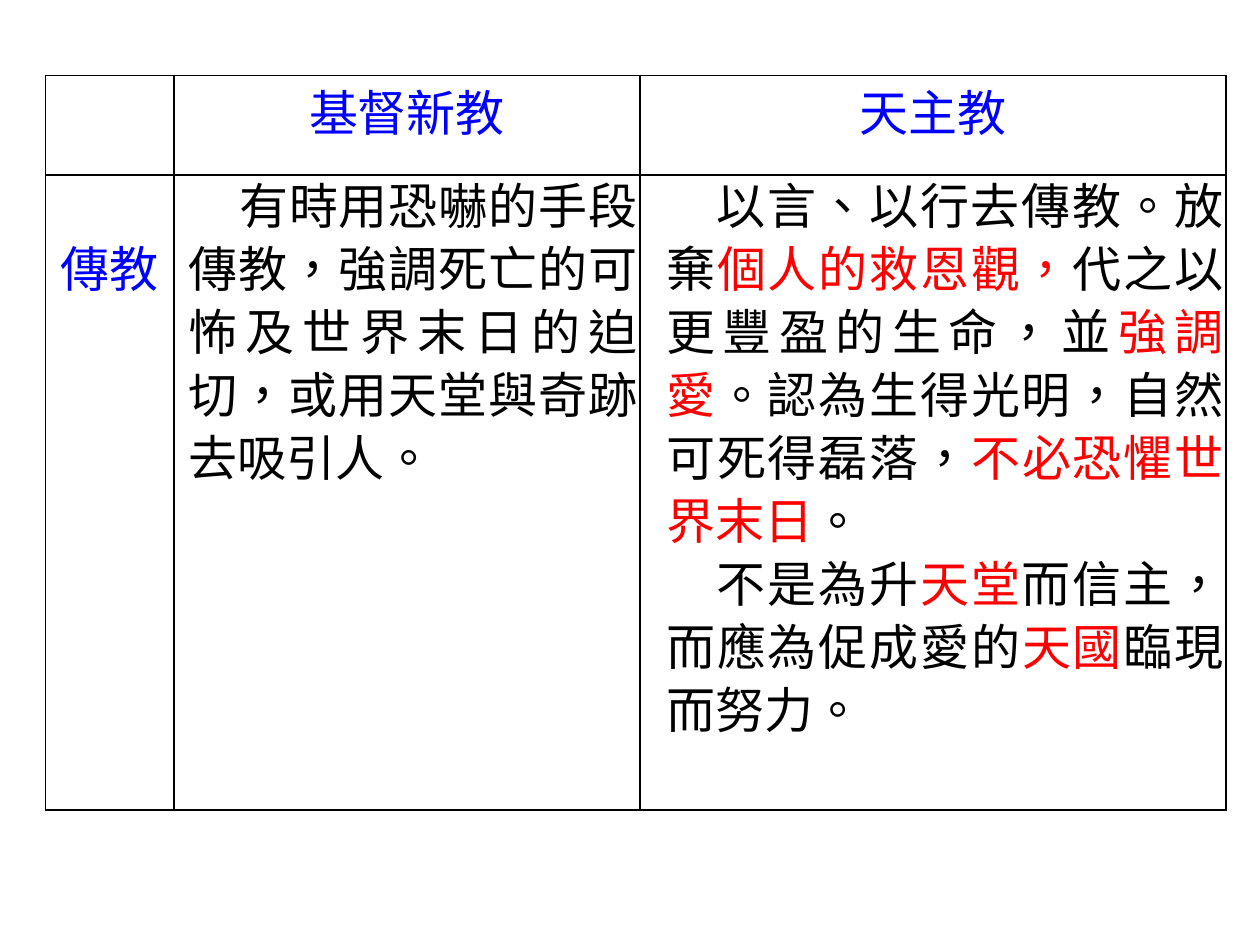
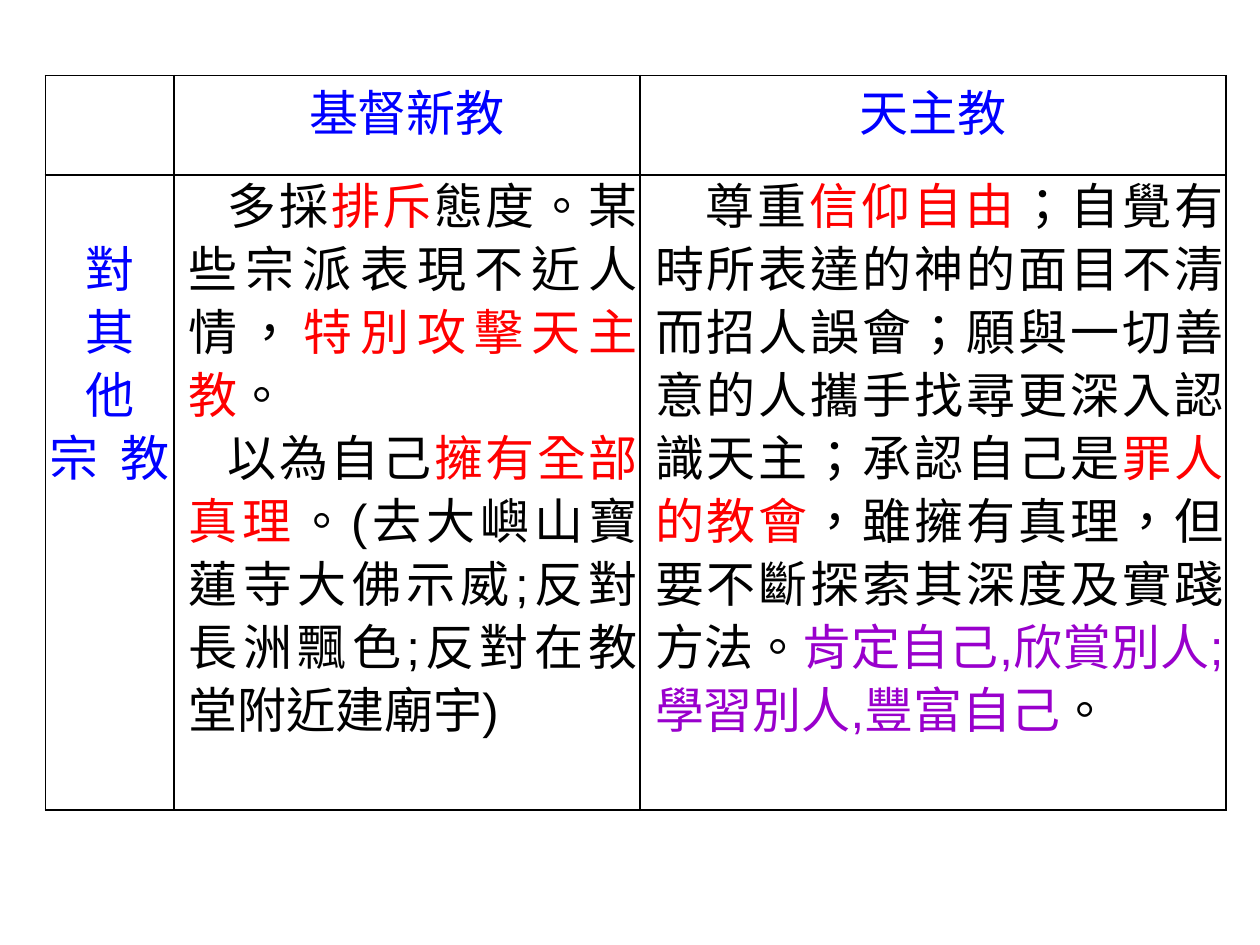
from dataclasses import dataclass

from lxml import etree
from pptx import Presentation
from pptx.dml.color import RGBColor
from pptx.enum.text import MSO_ANCHOR, PP_ALIGN
from pptx.oxml.ns import qn
from pptx.util import Inches, Pt

CENTER, JUSTIFY = PP_ALIGN.CENTER, PP_ALIGN.JUSTIFY
TOP = MSO_ANCHOR.TOP


@dataclass(frozen=True)
class Theme:
    ink: str = "000000"
    heading: str = "0000FF"
    stress: str = "FF0000"
    motto: str = "9900CC"
    paper: str = "FFFFFF"
    latin: str = "Arial"
    asian: str = "Noto Sans CJK TC"
    size: int = 28
    head_leading: int = 40
    body_leading: int = 36
    border: int = 1
    inset: float = 0.02


THEME = Theme()
INK, HEADING, STRESS, MOTTO = THEME.ink, THEME.heading, THEME.stress, THEME.motto

# Table box and its grid, in inches
PAGE_WIDTH, PAGE_HEIGHT = 10, 7.5
TABLE_BOX = (0.36, 0.6, 9.37, 5.83)
COLUMNS = (1.02, 3.7, 4.65)
ROWS = (0.79, 5.04)
CHURCHES = ("基督新教", "天主教")


@dataclass(frozen=True)
class Layout:
    """Alignment, line pitch and indents of the paragraphs in a cell."""
    align: PP_ALIGN = JUSTIFY
    leading: int = THEME.body_leading
    left: float = 0
    first: float = 0
    lines_above: int = 0


HEAD = Layout(CENTER, THEME.head_leading)

# Each cell is (layout, paragraphs); a paragraph is a list of
# (text, colour) or (text, colour, letter spacing in points)
MISSION = (
    (Layout(left=0.1, lines_above=1), [[("傳教", HEADING)]]),
    (Layout(left=0.1, first=0.4), [
        [("有時用恐嚇的手段傳教，強調死亡的可怖及世界末日的迫切，"
          "或用天堂與奇跡去吸引人。", INK)],
    ]),
    (Layout(left=0.19, first=0.4), [
        [("以言、以行去傳教。放棄", INK), ("個人的救恩觀，", STRESS),
         ("代之以更豐盈的生命，並", INK), ("強調愛", STRESS),
         ("。認為生得光明，自然可死得磊落，", INK),
         ("不必恐懼世界末日", STRESS), ("。", INK)],
        [("不是為升", INK), ("天堂", STRESS),
         ("而信主，而應為促成愛的", INK), ("天國", STRESS),
         ("臨現而努力。", INK)],
    ]),
)

OTHER_RELIGIONS = (
    (Layout(CENTER, lines_above=1),
     [[(sign, HEADING)] for sign in "對其他"]
     + [[("宗 ", HEADING, 3), ("教", HEADING)]]),
    (Layout(left=0.1, first=0.31), [
        [("多採", INK), ("排斥", STRESS),
         ("態度。某些宗派表現不近人情，", INK),
         ("特別攻擊天主教", STRESS), ("。", INK)],
        [("以為自己", INK), ("擁有全部真理", STRESS),
         ("。(去大嶼山寶蓮寺大佛示威;反對長洲飄色;"
          "反對在教堂附近建廟宇)", INK)],
    ]),
    (Layout(left=0.1, first=0.4), [
        [("尊重", INK), ("信仰自由", STRESS),
         ("；自覺有時所表達的神的面目不清而招人誤會；"
          "願與一切善意的人攜手找尋更深入認識天主；承認自己是", INK),
         ("罪人的教會", STRESS),
         ("，雖擁有真理，但要不斷探索其深度及實踐方法。", INK),
         ("肯定自己,欣賞別人;學習別人,豐富自己", MOTTO), ("。", INK)],
    ]),
)


def add_span(para, text, colour, spacing=0):
    span = para.add_run()
    span.text = text
    span.font.size = Pt(THEME.size)
    span.font.bold = False
    span.font.name = THEME.latin
    span.font.color.rgb = RGBColor.from_string(colour)
    props = span._r.get_or_add_rPr()
    props.set("lang", "zh-TW")
    if spacing:
        props.set("spc", str(spacing * 100))
    asian = etree.Element(qn("a:ea"), typeface=THEME.asian)
    props.find(qn("a:latin")).addnext(asian)


def fill_cell(cell, layout, paragraphs):
    frame = cell.text_frame
    cell.margin_top = Pt(layout.leading * layout.lines_above)
    for index, spans in enumerate(paragraphs):
        para = frame.add_paragraph() if index else frame.paragraphs[0]
        para.alignment = layout.align
        para.line_spacing = Pt(layout.leading)
        props = para._p.get_or_add_pPr()
        props.set("marL", str(Inches(layout.left)))
        props.set("indent", str(Inches(layout.first)))
        # Keep punctuation inside the cell at line ends
        props.set("hangingPunct", "0")
        for span in spans:
            add_span(para, *span)


def frame_cell(cell):
    """No fill, narrow insets and a thin line on all four sides."""
    cell.fill.background()
    cell.vertical_anchor = TOP
    cell.margin_left = cell.margin_right = Inches(THEME.inset)
    cell.margin_top = cell.margin_bottom = 0
    props = cell._tc.get_or_add_tcPr()
    for index, side in enumerate(("a:lnL", "a:lnR", "a:lnT", "a:lnB")):
        line = etree.Element(qn(side), w=str(Pt(THEME.border)))
        solid = etree.SubElement(line, qn("a:solidFill"))
        etree.SubElement(solid, qn("a:srgbClr"), val=THEME.ink)
        props.insert(index, line)


def add_comparison(page, box, topic):
    left, top, width, height = box
    table = page.shapes.add_table(
        len(ROWS), len(COLUMNS),
        Inches(left), Inches(top), Inches(width), Inches(height)).table
    table.first_row = table.horz_banding = False
    for column, share in zip(table.columns, COLUMNS):
        column.width = Inches(width * share / sum(COLUMNS))
    for row, share in zip(table.rows, ROWS):
        row.height = Inches(height * share / sum(ROWS))
    for cell in table.iter_cells():
        frame_cell(cell)

    # Church names across the top
    for column, church in enumerate(CHURCHES, start=1):
        fill_cell(table.cell(0, column), HEAD, [[(church, HEADING)]])
    # Topic and the two views on it
    for column, (layout, paragraphs) in enumerate(topic):
        fill_cell(table.cell(1, column), layout, paragraphs)


def add_page(deck, topic):
    page = deck.slides.add_slide(deck.slide_layouts[6])
    page.background.fill.solid()
    page.background.fill.fore_color.rgb = RGBColor.from_string(THEME.paper)
    add_comparison(page, TABLE_BOX, topic)


def main():
    deck = Presentation()
    deck.slide_width, deck.slide_height = Inches(PAGE_WIDTH), Inches(PAGE_HEIGHT)
    for topic in (MISSION, OTHER_RELIGIONS):
        add_page(deck, topic)
    deck.save("out.pptx")


if __name__ == "__main__":
    main()
